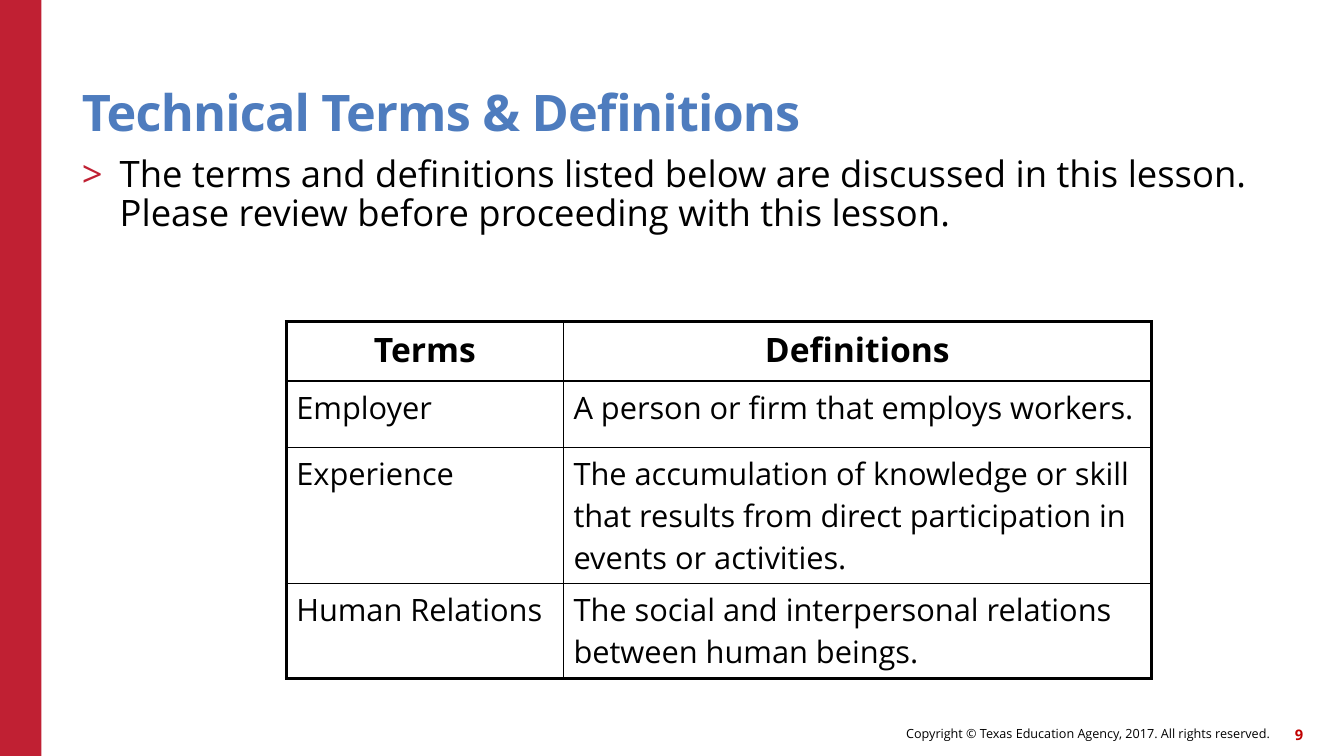
"""Build the Technical Terms & Definitions slide."""
import pptx
import pptx.dml.color
import pptx.enum.shapes
import pptx.enum.text
import pptx.oxml.ns
import pptx.util
from lxml import etree

Pt = pptx.util.Pt
ALIGN = pptx.enum.text.PP_ALIGN
ANCHOR = pptx.enum.text.MSO_ANCHOR

FONT = "Open Sans"
RED, DARK_RED, BLUE, BLACK = "C02033", "C00000", "4E7CBE", "000000"
TITLE = "Technical Terms & Definitions"
INTRO = ("The terms and definitions listed below are discussed in this lesson. "
         "Please review before proceeding with this lesson.")
COPYRIGHT = "Copyright © Texas Education Agency, 2017. All rights reserved."
PAGE_NUMBER = "9"
TERMS = [
    ("Terms", "Definitions"),
    ("Employer", "A person or firm that employs workers."),
    ("Experience", "The accumulation of knowledge or skill that results from "
                   "direct participation in events or activities."),
    ("Human Relations", "The social and interpersonal relations between human beings."),
]
COLUMN_WIDTHS = (198, 419.8)
ROW_HEIGHTS = (42.5, 47.5, 97.2, 67.7)
OUTER_LINE, INNER_LINE = 2.25, 1


def color(value):
    return pptx.dml.color.RGBColor.from_string(value)


def add_element(parent, tag, **attributes):
    element = etree.SubElement(parent, pptx.oxml.ns.qn(tag))
    for name, value in attributes.items():
        element.set(name, str(value))
    return element


def write(frame, text, size, fill=BLACK, bold=False, align=ALIGN.LEFT,
          line_spacing=1.0, tracking=0, bullet=None, indent=0):
    paragraph = frame.paragraphs[0]
    paragraph.alignment = align
    paragraph.line_spacing = line_spacing
    paragraph.space_before = Pt(0)
    if bullet:
        properties = paragraph._p.get_or_add_pPr()
        properties.set("marL", str(Pt(indent)))
        properties.set("indent", str(-Pt(indent)))
        add_element(add_element(properties, "a:buClr"), "a:srgbClr", val=RED)
        add_element(properties, "a:buFont", typeface=FONT)
        add_element(properties, "a:buChar", char=bullet)
    run = paragraph.add_run()
    run.text = text
    run.font.name = FONT
    run.font.size = Pt(size)
    run.font.bold = bold
    run.font.color.rgb = color(fill)
    if tracking:
        run._r.get_or_add_rPr().set("spc", str(round(tracking * 100)))


def place(shape, left, top, width, height, anchor):
    shape.left, shape.top, shape.width, shape.height = map(Pt, (left, top, width, height))
    frame = shape.text_frame
    frame.margin_left = frame.margin_right = frame.margin_top = frame.margin_bottom = 0
    frame.word_wrap = True
    frame.auto_size = pptx.enum.text.MSO_AUTO_SIZE.NONE
    frame.vertical_anchor = anchor
    return frame


def set_borders(cell, widths):
    properties = cell._tc.get_or_add_tcPr()
    for side, width in zip("LRTB", widths):
        line = add_element(properties, f"a:ln{side}", w=Pt(width))
        add_element(add_element(line, "a:solidFill"), "a:srgbClr", val=BLACK)


def add_terms_table(slide, left, top):
    row_count, column_count = len(TERMS), len(COLUMN_WIDTHS)
    table = slide.shapes.add_table(row_count, column_count, Pt(left), Pt(top),
                                   Pt(sum(COLUMN_WIDTHS)), Pt(sum(ROW_HEIGHTS))).table
    table.first_row = table.horz_banding = False
    for column, width in zip(table.columns, COLUMN_WIDTHS):
        column.width = Pt(width)
    for row, height in zip(table.rows, ROW_HEIGHTS):
        row.height = Pt(height)
    for r, texts in enumerate(TERMS):
        for c, text in enumerate(texts):
            cell = table.cell(r, c)
            edges = (c == 0, c == column_count - 1, r == 0, r == row_count - 1)
            set_borders(cell, [OUTER_LINE if edge else INNER_LINE for edge in edges])
            cell.fill.background()
            header = r == 0
            write(cell.text_frame, text, size=24 if header else 22, bold=header,
                  align=ALIGN.CENTER if header else ALIGN.LEFT)


def main():
    presentation = pptx.Presentation()
    presentation.slide_width, presentation.slide_height = Pt(960), Pt(540)
    slide = presentation.slides.add_slide(presentation.slide_layouts[1])
    title, body = slide.placeholders

    band = slide.shapes.add_shape(pptx.enum.shapes.MSO_SHAPE.RECTANGLE,
                                  0, 0, Pt(29.5), Pt(540))
    band.shadow.inherit = False
    band.fill.solid()
    band.fill.fore_color.rgb = color(RED)
    band.line.fill.background()

    write(place(title, 58.5, 32.4, 792, 69, ANCHOR.BOTTOM), TITLE, size=36, fill=BLUE,
          bold=True, line_spacing=0.9, tracking=-0.6)
    write(place(body, 58.5, 111.6, 870.5, 373, ANCHOR.TOP), INTRO, size=26,
          line_spacing=0.9, bullet=">", indent=27)
    add_terms_table(slide, 204.5, 229.7)

    footers = [
        (COPYRIGHT, (442, 512.6, 465, 23), dict(size=9)),
        (PAGE_NUMBER, (900.7, 513.4, 30.2, 23), dict(size=10.5, fill=DARK_RED, bold=True)),
    ]
    for text, box, style in footers:
        shape = slide.shapes.add_textbox(0, 0, 0, 0)
        write(place(shape, *box, ANCHOR.MIDDLE), text, align=ALIGN.RIGHT, **style)

    presentation.save("out.pptx")


if __name__ == "__main__":
    main()
